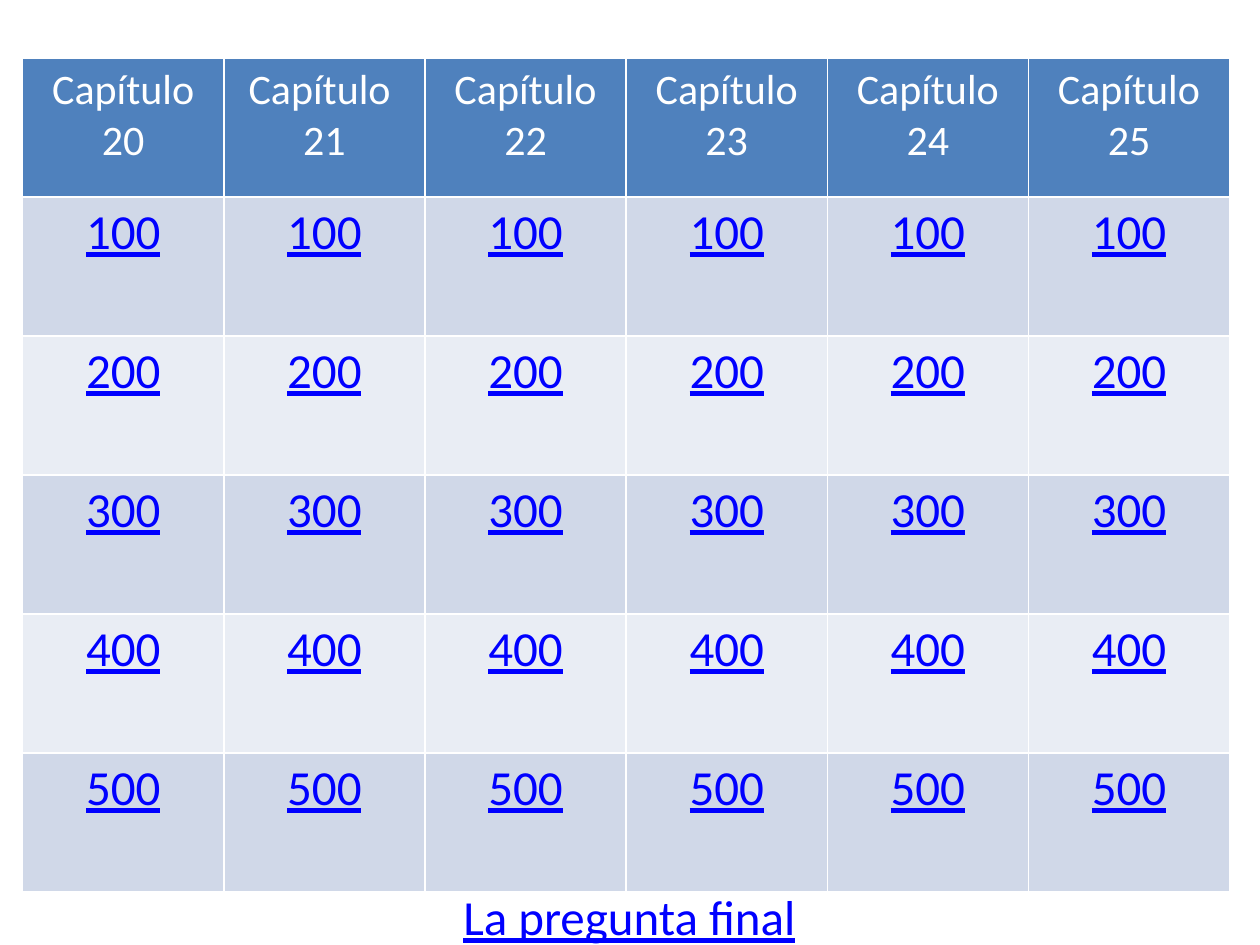
"""Build a quiz board slide with chapter columns and point values."""
from pptx import Presentation
from pptx.dml.color import RGBColor
from pptx.enum.text import MSO_AUTO_SIZE, PP_ALIGN
from pptx.util import Inches, Pt

CENTER = PP_ALIGN.CENTER
FIT_SHAPE = MSO_AUTO_SIZE.SHAPE_TO_FIT_TEXT
WHITE = RGBColor(0xFF, 0xFF, 0xFF)
HEADER_BLUE = RGBColor(0x4F, 0x81, 0xBD)
BAND_DARK = RGBColor(0xD0, 0xD8, 0xE8)
BAND_LIGHT = RGBColor(0xE9, 0xED, 0xF4)
LINK_BLUE = RGBColor(0x00, 0x00, 0xFF)

CHAPTERS = ["Capítulo 20", "Capítulo \n21", "Capítulo 22",
            "Capítulo 23", "Capítulo 24", "Capítulo 25"]
POINTS = ["100", "200", "300", "400", "500"]
BOARD_WIDTH = 9.58
BOARD_HEIGHT = 6.62


def write_text(text_frame, text, size=28, color=LINK_BLUE, underline=True):
    text_frame.text = text
    for paragraph in text_frame.paragraphs:
        paragraph.alignment = CENTER
        for run in paragraph.runs:
            run.font.name = "Calibri"
            run.font.size = Pt(size)
            run.font.bold = False
            run.font.underline = underline
            run.font.color.rgb = color


def fill_cell(cell, text, fill, **text_format):
    cell.fill.solid()
    cell.fill.fore_color.rgb = fill
    write_text(cell.text_frame, text, **text_format)


def add_board(slide):
    row_count, column_count = len(POINTS) + 1, len(CHAPTERS)
    table = slide.shapes.add_table(
        row_count, column_count, Inches(0.18), Inches(0.46),
        Inches(BOARD_WIDTH), Inches(BOARD_HEIGHT)).table
    for column in table.columns:
        column.width = Inches(BOARD_WIDTH / column_count)
    for row in table.rows:
        row.height = Inches(BOARD_HEIGHT / row_count)
    for column_index, chapter in enumerate(CHAPTERS):
        fill_cell(table.cell(0, column_index), chapter, HEADER_BLUE,
                  size=24, color=WHITE, underline=False)
        for row_index, points in enumerate(POINTS, start=1):
            fill = BAND_DARK if row_index % 2 else BAND_LIGHT
            fill_cell(table.cell(row_index, column_index), points, fill)


def add_final_question(slide):
    text_box = slide.shapes.add_textbox(
        Inches(2.96), Inches(6.99), Inches(4.07), Inches(0.57))
    text_frame = text_box.text_frame
    text_frame.word_wrap = True
    text_frame.auto_size = FIT_SHAPE
    write_text(text_frame, "La pregunta final")


def main():
    presentation = Presentation()
    presentation.slide_width = Inches(10)
    presentation.slide_height = Inches(7.5)
    slide = presentation.slides.add_slide(presentation.slide_layouts[6])
    add_board(slide)
    add_final_question(slide)
    presentation.save("out.pptx")


if __name__ == "__main__":
    main()
